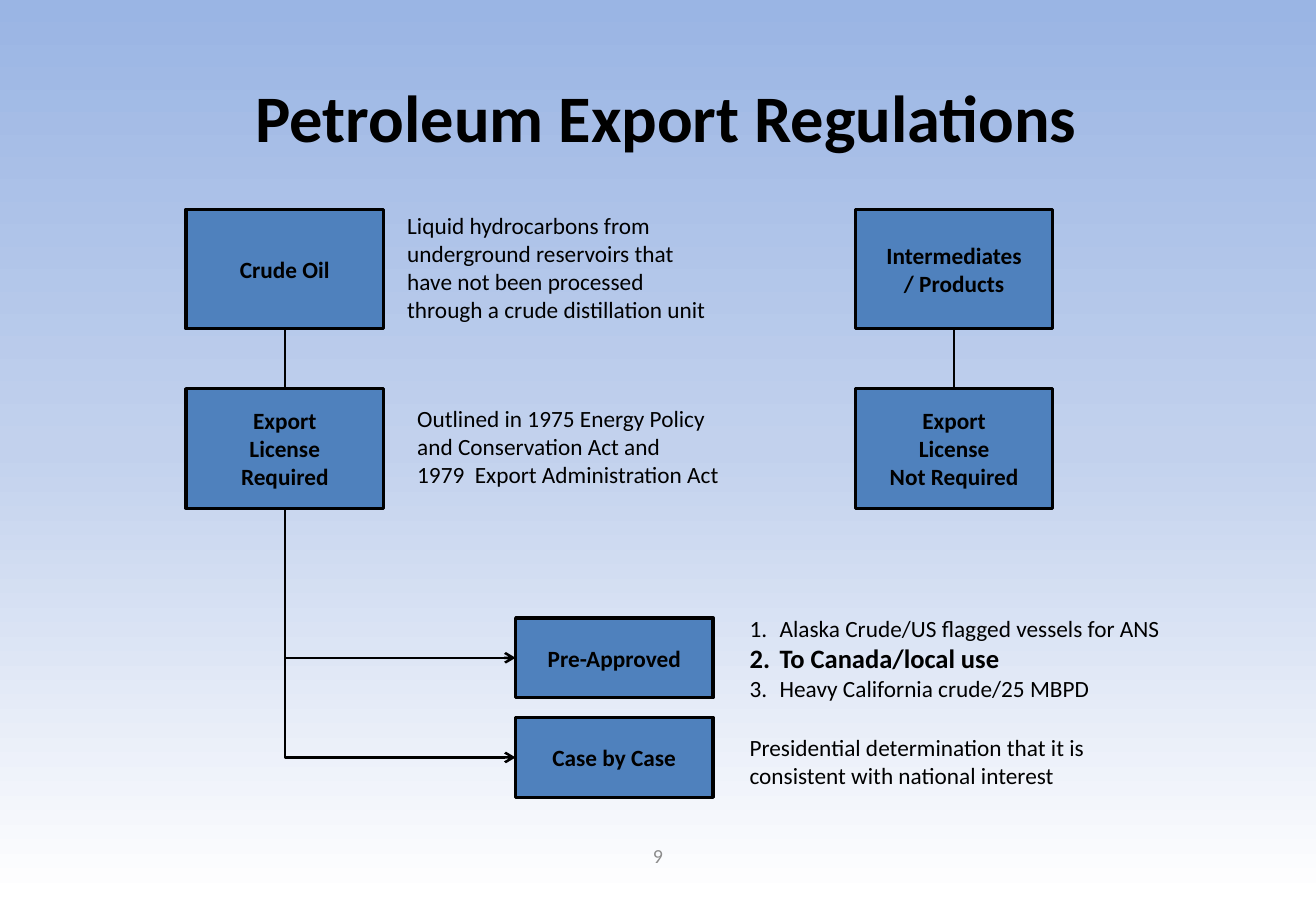
from copy import deepcopy

from lxml import etree
from pptx import Presentation
from pptx.dml.color import RGBColor
from pptx.enum.shapes import MSO_CONNECTOR, MSO_SHAPE
from pptx.enum.text import MSO_ANCHOR, MSO_AUTO_SIZE, PP_ALIGN
from pptx.oxml.ns import qn
from pptx.util import Pt

LEFT, CENTER = PP_ALIGN.LEFT, PP_ALIGN.CENTER
TOP, MIDDLE = MSO_ANCHOR.TOP, MSO_ANCHOR.MIDDLE
STRAIGHT, ELBOW = MSO_CONNECTOR.STRAIGHT, MSO_CONNECTOR.ELBOW
RECTANGLE, NO_AUTOFIT = MSO_SHAPE.RECTANGLE, MSO_AUTO_SIZE.NONE
SIDE_TOP, SIDE_LEFT, SIDE_BOTTOM = 0, 1, 2

FONT = "Calibri"
COLORS = {
    "ink": "000000", "box": "4F81BD", "number": "8C8C8C",
    "sky_top": "9AB5E4", "sky_middle": "C2D1ED", "sky_bottom": "FFFFFF",
}

# Grid, in points
BOX_WIDTH, BOX_HEIGHT, OUTCOME_HEIGHT = 118.8, 72, 48
CRUDE_X, OUTCOME_X, PRODUCTS_X = 112, 310.3, 514.8
CLASS_Y, LICENSE_Y = 126, 234
PRE_APPROVED_Y, CASE_Y = 372, 432


def rgb(name):
    return RGBColor.from_string(COLORS[name])


def write_text(frame, lines, size=14, bold=False, color="ink", align=LEFT, anchor=TOP):
    frame.word_wrap = True
    frame.auto_size = NO_AUTOFIT
    frame.vertical_anchor = anchor
    for index, line in enumerate(lines):
        paragraph = frame.paragraphs[0] if index == 0 else frame.add_paragraph()
        paragraph.alignment = align
        paragraph.space_before = Pt(0)
        run = paragraph.add_run()
        run.text = line
        run.font.name = FONT
        run.font.size = Pt(size)
        run.font.bold = bold
        run.font.color.rgb = rgb(color)


def place(element, x, y, width, height):
    element.left, element.top = Pt(x), Pt(y)
    element.width, element.height = Pt(width), Pt(height)


def add_note(slide, x, y, width, height, lines, **text_format):
    note = slide.shapes.add_textbox(Pt(x), Pt(y), Pt(width), Pt(height))
    write_text(note.text_frame, lines, **text_format)


def add_box(slide, x, y, height, lines):
    box = slide.shapes.add_shape(RECTANGLE, Pt(x), Pt(y), Pt(BOX_WIDTH), Pt(height))
    box.shadow.inherit = False
    box.fill.solid()
    box.fill.fore_color.rgb = rgb("box")
    box.line.color.rgb = rgb("ink")
    box.line.width = Pt(2)
    write_text(box.text_frame, lines, bold=True, align=CENTER, anchor=MIDDLE)
    return box


def join(slide, kind, source, target, target_side):
    link = slide.shapes.add_connector(kind, 0, 0, 0, 0)
    link.begin_connect(source, SIDE_BOTTOM)
    link.end_connect(target, target_side)
    link.line.color.rgb = rgb("ink")
    link.line.width = Pt(1.5)
    etree.SubElement(link._element.spPr, qn("a:effectLst"))
    return link


def add_branch(slide, source, target):
    """Arrow that runs down from source, then right to target."""
    branch = join(slide, ELBOW, source, target, SIDE_LEFT)
    # A single-bend connector turned a quarter: width and height change places
    across, down = branch.width, branch.height
    branch.left += (across - down) // 2
    branch.top += (down - across) // 2
    branch.width, branch.height = down, across
    properties = branch._element.spPr
    transform = properties.find(qn("a:xfrm"))
    transform.set("rot", "16200000")
    transform.set("flipH", "1")
    properties.find(qn("a:prstGeom")).set("prst", "bentConnector2")
    etree.SubElement(properties.find(qn("a:ln")), qn("a:tailEnd"), type="arrow")


def number_items(frame):
    for paragraph in frame.paragraphs:
        properties = paragraph._p.get_or_add_pPr()
        properties.set("marL", str(Pt(18)))
        properties.set("indent", str(-Pt(18)))
        etree.SubElement(properties, qn("a:buFont"), typeface="+mj-lt")
        etree.SubElement(properties, qn("a:buAutoNum"), type="arabicPeriod")


def paint_background(slide):
    fill = slide.background.fill
    fill.gradient()
    fill.gradient_angle = 270
    stop_list = next(slide._element.iter(qn("a:gsLst")))
    stop_list.insert(1, deepcopy(stop_list[0]))
    names = ("sky_top", "sky_middle", "sky_bottom")
    for stop, name, position in zip(fill.gradient_stops, names, (0, 0.5, 1)):
        stop.color.rgb = rgb(name)
        stop.position = position


def main():
    deck = Presentation()
    deck.slide_width, deck.slide_height = Pt(792), Pt(540)
    slide = deck.slides.add_slide(deck.slide_layouts[1])
    paint_background(slide)

    # Title and numbered list of pre-approved exports
    title, approvals = slide.placeholders
    place(title, 48, 42, 706, 55.4)
    write_text(title.text_frame, ["Petroleum Export Regulations"],
               size=40, bold=True, align=CENTER)
    place(approvals, 444, 366, 270, 60.5)
    write_text(approvals.text_frame, [
        "Alaska Crude/US flagged vessels for ANS",
        "To Canada/local use",
        "Heavy California crude/25 MBPD",
    ])
    number_items(approvals.text_frame)
    canada = approvals.text_frame.paragraphs[1].runs[0]
    canada.font.size, canada.font.bold = Pt(16), True

    # Explanations
    add_note(slide, 238, 123.5, 199.4, 75, [
        "Liquid hydrocarbons from",
        "underground reservoirs that",
        "have not been processed through a crude distillation unit",
    ])
    add_note(slide, 244, 240, 199.4, 58, [
        "Outlined in 1975 Energy Policy and Conservation Act and",
        "1979  Export Administration Act",
    ])
    add_note(slide, 444, 438, 217.4, 41, [
        "Presidential determination that it is consistent with national interest",
    ])

    # Crude oil branch
    crude = add_box(slide, CRUDE_X, CLASS_Y, BOX_HEIGHT, ["Crude Oil"])
    required = add_box(slide, CRUDE_X, LICENSE_Y, BOX_HEIGHT,
                       ["Export", "License", "Required"])
    join(slide, STRAIGHT, crude, required, SIDE_TOP)
    for y, outcome in ((PRE_APPROVED_Y, "Pre-Approved"), (CASE_Y, "Case by Case")):
        add_branch(slide, required,
                   add_box(slide, OUTCOME_X, y, OUTCOME_HEIGHT, [outcome]))

    # Products branch
    products = add_box(slide, PRODUCTS_X, CLASS_Y, BOX_HEIGHT,
                       ["Intermediates", "/ Products"])
    not_required = add_box(slide, PRODUCTS_X, LICENSE_Y, BOX_HEIGHT,
                           ["Export", "License", "Not Required"])
    join(slide, STRAIGHT, products, not_required, SIDE_TOP)

    # Page number
    add_note(slide, 270.7, 500.5, 250.6, 28.8, ["9"],
             size=12, color="number", align=CENTER, anchor=MIDDLE)

    deck.save("out.pptx")


if __name__ == "__main__":
    main()
